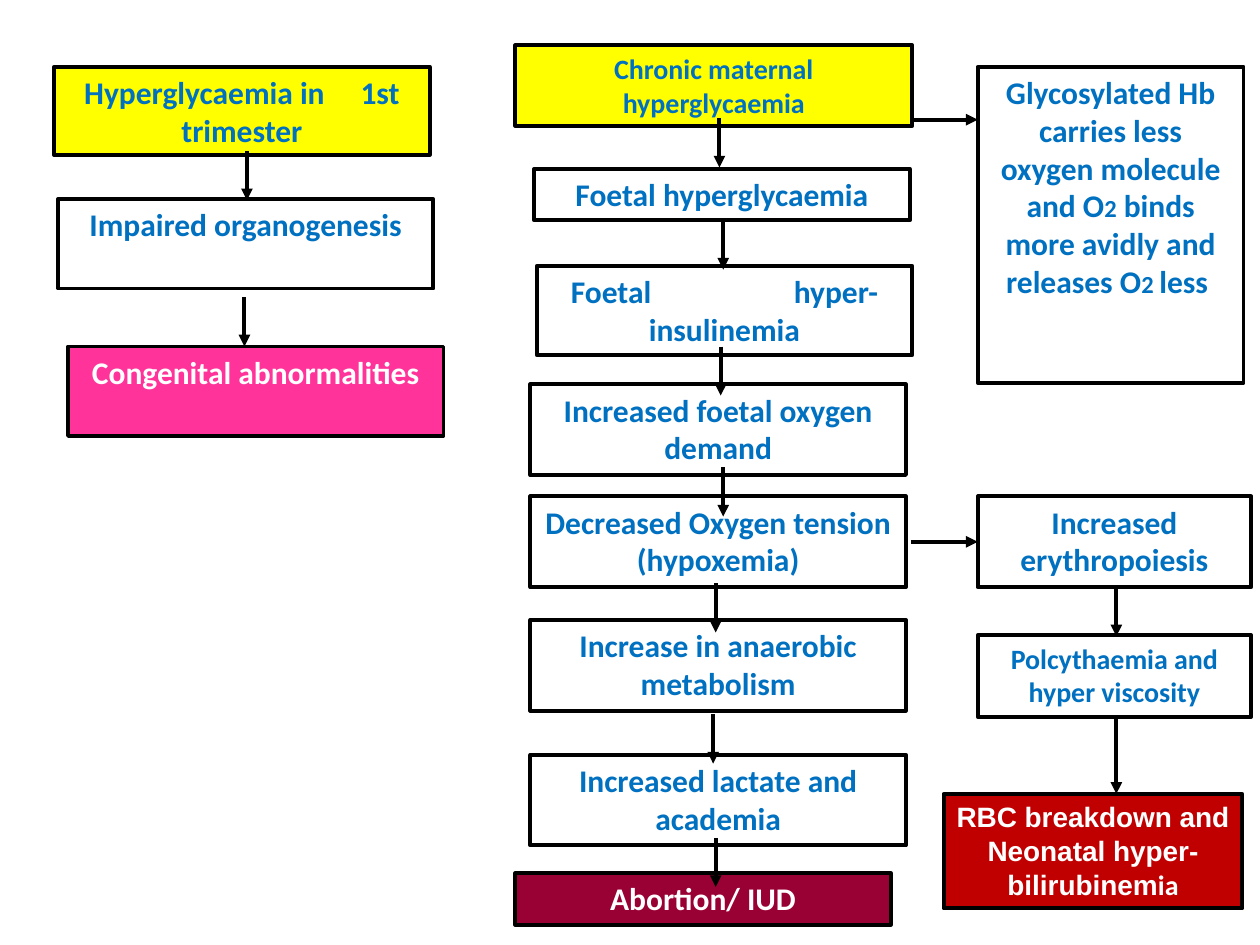
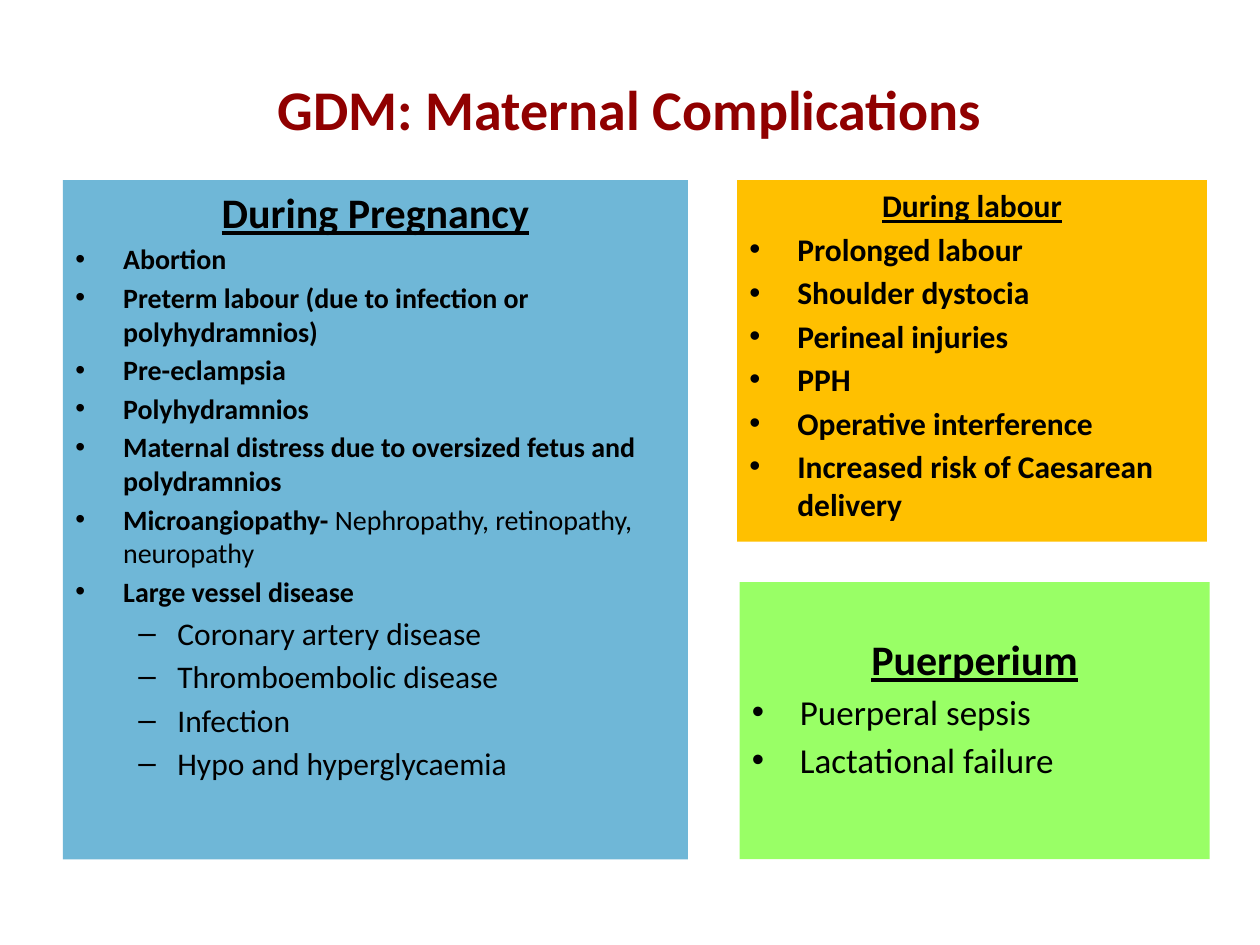
import pptx
import pptx.util
import pptx.dml.color
import pptx.enum.shapes
import pptx.enum.text
import pptx.oxml.ns
import lxml.etree

Inches = pptx.util.Inches
Pt = pptx.util.Pt
RGBColor = pptx.dml.color.RGBColor
ALIGN = pptx.enum.text.PP_ALIGN
ANCHOR = pptx.enum.text.MSO_ANCHOR
qn = pptx.oxml.ns.qn

BLACK = RGBColor(0x00, 0x00, 0x00)
WHITE = RGBColor(0xFF, 0xFF, 0xFF)
BLUE = RGBColor(0x00, 0x70, 0xC0)
YELLOW = RGBColor(0xFF, 0xFF, 0x00)
PINK = RGBColor(0xFF, 0x33, 0x99)
WINE = RGBColor(0x99, 0x00, 0x33)
RED = RGBColor(0xC0, 0x00, 0x00)
TITLE_RED = RGBColor(0x90, 0x00, 0x00)
SKY = RGBColor(0x6F, 0xB7, 0xD7)
AMBER = RGBColor(0xFF, 0xC0, 0x00)
LIME = RGBColor(0x99, 0xFF, 0x66)

LINE_WIDTH = Pt(2.25)
STEP_WIDTH = 2.98
ARROW_LENGTH = 0.39


def add_run(paragraph, text, size=18, color=BLACK, bold=True, underline=False,
            font="Calibri", spacing=0):
    """Append a run; spacing is extra letter spacing in points."""
    run = paragraph.add_run()
    run.text = text
    run.font.name = font
    run.font.size = Pt(size)
    run.font.bold = bold
    run.font.underline = underline
    run.font.color.rgb = color
    if spacing:
        run.font._element.set("spc", str(round(spacing * 100)))


def add_bullet(paragraph, mark, left, hanging):
    properties = paragraph._p.get_or_add_pPr()
    properties.set("marL", str(Inches(left)))
    properties.set("indent", str(-Inches(hanging)))
    lxml.etree.SubElement(properties, qn("a:buFont")).set("typeface", "Arial")
    lxml.etree.SubElement(properties, qn("a:buChar")).set("char", mark)


class Deck:
    def __init__(self):
        self.presentation = pptx.Presentation()
        self.presentation.slide_width = Inches(10)
        self.presentation.slide_height = Inches(7.5)
        self.slide = None

    def new_slide(self):
        self.slide = self.presentation.slides.add_slide(self.presentation.slide_layouts[6])

    def rectangle(self, left, top, width, height, fill=None, outline=None):
        """Draw a rectangle and return its empty, top-anchored text frame."""
        shape = self.slide.shapes.add_shape(
            pptx.enum.shapes.MSO_SHAPE.RECTANGLE,
            Inches(left), Inches(top), Inches(width), Inches(height))
        shape.shadow.inherit = False
        if fill is None:
            shape.fill.background()
        else:
            shape.fill.solid()
            shape.fill.fore_color.rgb = fill
        if outline is None:
            shape.line.fill.background()
        else:
            shape.line.color.rgb = outline
            shape.line.width = LINE_WIDTH
        frame = shape.text_frame
        frame.word_wrap = True
        frame.vertical_anchor = ANCHOR.TOP
        return frame

    def title(self, text):
        box = self.slide.shapes.add_textbox(Inches(0.5), Inches(-0.08), Inches(9), Inches(1.25))
        frame = box.text_frame
        frame.word_wrap = True
        frame.vertical_anchor = ANCHOR.BOTTOM
        frame.paragraphs[0].alignment = ALIGN.CENTER
        add_run(frame.paragraphs[0], text, size=32, color=TITLE_RED)

    def step(self, left, top, width, height, text, fill=None, color=BLUE, size=18):
        """Draw a flow box; text is a string or a list of (text, format) runs."""
        frame = self.rectangle(left, top, width, height, fill, outline=BLACK)
        paragraph = frame.paragraphs[0]
        paragraph.alignment = ALIGN.CENTER
        for words, style in [(text, {})] if isinstance(text, str) else text:
            add_run(paragraph, words, **{"size": size, "color": color, **style})

    def arrow(self, x1, y1, x2, y2):
        connector = self.slide.shapes.add_connector(
            pptx.enum.shapes.MSO_CONNECTOR.STRAIGHT,
            Inches(x1), Inches(y1), Inches(x2), Inches(y2))
        connector.line.color.rgb = BLACK
        connector.line.width = LINE_WIDTH
        line = connector.line._get_or_add_ln()
        lxml.etree.SubElement(line, qn("a:tailEnd")).set("type", "triangle")
        lxml.etree.SubElement(connector._element.spPr, qn("a:effectLst"))

    def panel(self, left, top, width, height, fill, heading, items, heading_size=24,
              size=18, bold=True, subitems=(), inset=0.05):
        """Draw a coloured list; an item may be a (bold part, plain part) pair."""
        frame = self.rectangle(left, top, width, height, fill)
        frame.margin_top = Inches(inset)
        first = frame.paragraphs[0]
        first.alignment = ALIGN.CENTER
        first.space_before = Pt(heading_size * 0.18)
        add_run(first, heading, size=heading_size, underline=True)

        def add_item(parts, mark, indent, hanging, item_size):
            paragraph = frame.add_paragraph()
            paragraph.alignment = ALIGN.LEFT
            paragraph.space_before = Pt(item_size * 0.18)
            add_bullet(paragraph, mark, indent, hanging)
            for words, weight in parts:
                add_run(paragraph, words, size=item_size, bold=weight)

        for item in items:
            parts = [(item, bold)] if isinstance(item, str) else zip(item, (True, False))
            add_item(parts, "•", 0.38, 0.38, size)
        for item in subitems:
            add_item([(item, False)], "–", 0.81, 0.31, 18)


def build_pathways(deck):
    deck.new_slide()
    # First-trimester pathway
    deck.step(0.43, 0.53, STEP_WIDTH, 0.7,
              [("Hyperglycaemia in", {}), (" ", {"spacing": 16.3}), ("1st trimester", {})],
              fill=YELLOW)
    deck.step(0.46, 1.58, STEP_WIDTH, 0.71, "Impaired organogenesis")
    deck.step(0.54, 2.75, STEP_WIDTH, 0.71, "Congenital abnormalities", PINK, WHITE)

    # Chronic pathway
    deck.step(4.09, 0.36, 3.15, 0.64, "Chronic maternal hyperglycaemia", YELLOW, size=16)
    deck.step(4.24, 1.34, STEP_WIDTH, 0.41, "Foetal hyperglycaemia")
    deck.step(4.26, 2.11, STEP_WIDTH, 0.71,
              [("Foetal", {}), (" ", {"spacing": 77.3}), ("hyper-insulinemia", {})])
    for top, text in [(3.05, "Increased foetal oxygen demand"),
                      (3.94, "Decreased Oxygen tension (hypoxemia)"),
                      (4.92, "Increase in anaerobic metabolism"),
                      (5.99, "Increased lactate and academia")]:
        deck.step(4.21, top, STEP_WIDTH, 0.72, text)
    deck.step(4.09, 6.93, STEP_WIDTH, 0.41, "Abortion/ IUD", WINE, WHITE)

    # Blood changes
    small = {"size": 14}
    deck.step(7.76, 0.53, 2.11, 2.51,
              [("Glycosylated Hb carries less oxygen molecule and O", {}), ("2", small),
               (" binds more avidly and releases O", {}), ("2 ", small), ("less ", {})])
    deck.step(7.76, 3.94, 2.17, 0.72, "Increased erythropoiesis")
    deck.step(7.76, 5.04, 2.17, 0.65, "Polcythaemia and hyper viscosity", size=16)
    deck.step(7.49, 6.3, 2.37, 0.91,
              [("RBC breakdown and Neonatal hyper-bilirubinem", {"font": "Arial"}), ("ia", {})],
              RED, WHITE, size=16)

    for x, top in [(1.96, 1.2), (1.94, 2.36), (5.71, 0.94), (5.74, 1.75), (5.72, 2.75),
                   (5.74, 3.71), (5.68, 4.63), (5.66, 5.67), (5.68, 6.65), (8.86, 4.66)]:
        deck.arrow(x, top, x, top + ARROW_LENGTH)
    deck.arrow(8.86, 5.69, 8.86, 6.3)
    deck.arrow(7.24, 0.95, 7.76, 0.95)
    deck.arrow(7.23, 4.3, 7.76, 4.3)


def build_complications(deck):
    deck.new_slide()
    deck.title("GDM: Maternal Complications")
    deck.panel(0.5, 1.43, 4.96, 5.39, SKY, "During Pregnancy", [
        "Abortion",
        "Preterm labour (due to infection or polyhydramnios)",
        "Pre-eclampsia",
        "Polyhydramnios",
        "Maternal distress due to oversized fetus and polydramnios",
        ("Microangiopathy- ", "Nephropathy, retinopathy, neuropathy"),
        "Large vessel disease",
    ], size=16, subitems=["Coronary artery disease", "Thromboembolic disease",
                          "Infection", "Hypo and hyperglycaemia"])
    deck.panel(5.85, 1.43, 3.73, 2.87, AMBER, "During labour", [
        "Prolonged labour",
        "Shoulder dystocia",
        "Perineal injuries",
        "PPH",
        "Operative interference",
        "Increased risk of Caesarean delivery",
    ], heading_size=18)
    deck.panel(5.87, 4.62, 3.73, 2.2, LIME, "Puerperium",
               ["Puerperal sepsis", "Lactational failure"], size=20, bold=False, inset=0.41)


def main():
    deck = Deck()
    build_pathways(deck)
    build_complications(deck)
    deck.presentation.save("out.pptx")


if __name__ == "__main__":
    main()
